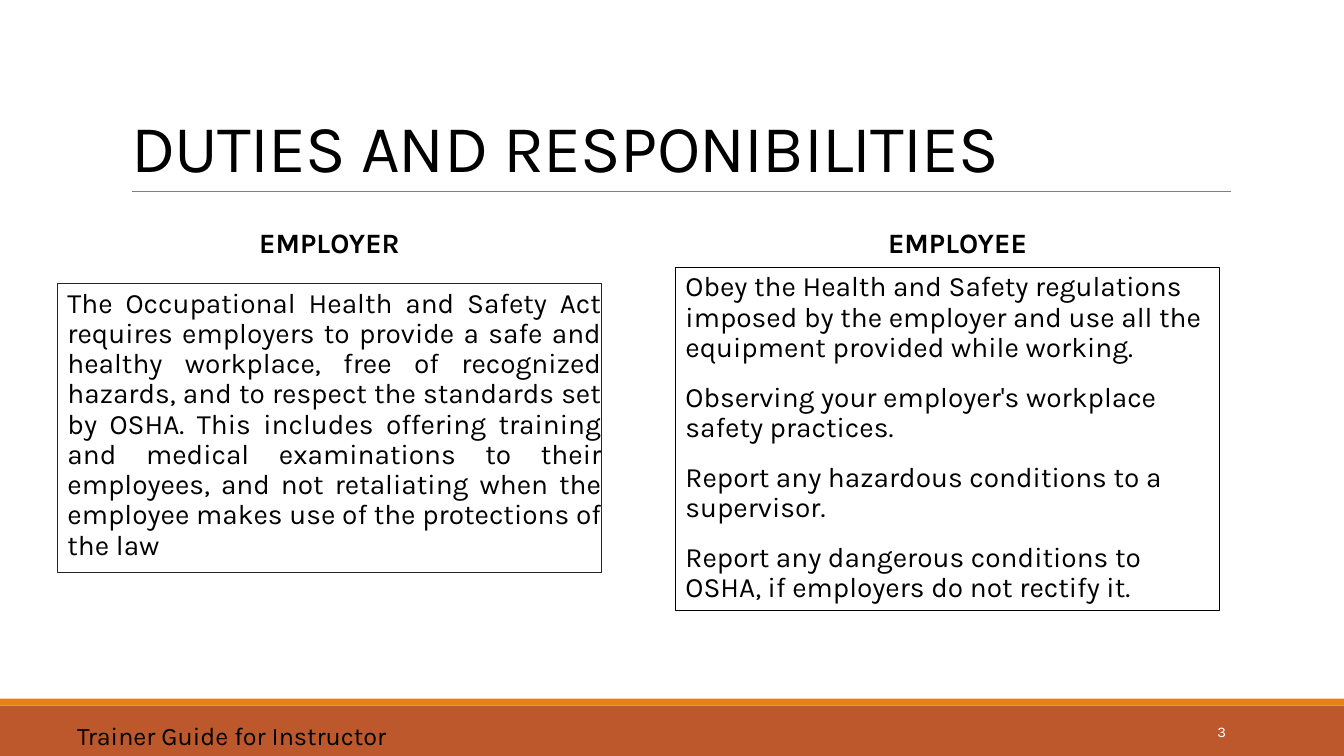
from lxml.etree import SubElement
from pptx import Presentation
from pptx.dml.color import RGBColor
from pptx.enum.shapes import MSO_CONNECTOR, MSO_SHAPE
from pptx.enum.text import MSO_ANCHOR, MSO_AUTO_SIZE, PP_ALIGN
from pptx.oxml.ns import qn
from pptx.util import Pt

BLACK = RGBColor(0x00, 0x00, 0x00)
WHITE = RGBColor(0xFF, 0xFF, 0xFF)
CHARCOAL = RGBColor(0x26, 0x26, 0x26)
GRAY = RGBColor(0x80, 0x80, 0x80)
RUST = RGBColor(0xBD, 0x58, 0x2C)
ORANGE = RGBColor(0xE4, 0x83, 0x12)
FONT = "Karla"
COLUMN_WIDTH = 388.8

EMPLOYER_DUTIES = [
    "The Occupational Health and Safety Act requires employers to provide a safe "
    "and healthy workplace, free of recognized hazards, and to respect the "
    "standards set by OSHA. This includes offering training and medical "
    "examinations to their employees, and not retaliating when the employee "
    "makes use of the protections of the law",
]
EMPLOYEE_DUTIES = [
    "Obey the Health and Safety regulations imposed by the employer and use all "
    "the equipment provided while working.",
    "Observing your employer's workplace safety practices.",
    "Report any hazardous conditions to a supervisor.",
    "Report any dangerous conditions to OSHA, if employers do not rectify it.",
]


def place(shape, left, top, width, height):
    shape.left, shape.top = Pt(left), Pt(top)
    shape.width, shape.height = Pt(width), Pt(height)


def add_blank_bullet(paragraph):
    """Hang the paragraph on an invisible bullet."""
    properties = paragraph._p.get_or_add_pPr()
    properties.set("marL", str(Pt(7.2)))
    properties.set("indent", str(Pt(-7.2)))
    bullet_color = SubElement(properties, qn("a:buClr"))
    SubElement(bullet_color, qn("a:srgbClr"), val=str(ORANGE))
    SubElement(properties, qn("a:buChar"), char=" ")


def write(shape, paragraphs, size=20, color=BLACK, bold=False,
          align=PP_ALIGN.LEFT, anchor=MSO_ANCHOR.TOP, line_spacing=1.0,
          side_inset=7.2, bulleted=False, tracking=None):
    frame = shape.text_frame
    frame.word_wrap = True
    frame.auto_size = MSO_AUTO_SIZE.NONE
    frame.vertical_anchor = anchor
    frame.margin_left = frame.margin_right = Pt(side_inset)
    frame.margin_top = frame.margin_bottom = Pt(3.6)
    for index, text in enumerate(paragraphs):
        paragraph = frame.add_paragraph() if index else frame.paragraphs[0]
        if bulleted:
            add_blank_bullet(paragraph)
        paragraph.alignment = align
        paragraph.line_spacing = line_spacing
        paragraph.space_before = Pt(12 if index else 0)
        paragraph.space_after = Pt(2 if bulleted else 0)
        run = paragraph.add_run()
        run.text = text
        run.font.name = FONT
        run.font.size = Pt(size)
        run.font.bold = bold
        run.font.color.rgb = color
        if tracking is not None:
            run.font._element.set("spc", str(int(tracking * 100)))


def add_bar(slide, top, height, color):
    bar = slide.shapes.add_shape(
        MSO_SHAPE.RECTANGLE, 0, Pt(top), Pt(960), Pt(height))
    bar.shadow.inherit = False
    bar.fill.solid()
    bar.fill.fore_color.rgb = color
    bar.line.fill.background()


def add_title_rule(slide):
    rule = slide.shapes.add_connector(
        MSO_CONNECTOR.STRAIGHT, Pt(94.3), Pt(136.8), Pt(879), Pt(136.8))
    rule.line.color.rgb = GRAY
    rule.line.width = Pt(0.5)
    SubElement(rule._element.spPr, qn("a:effectLst"))


def fill_heading(heading, text, left):
    place(heading, left, 145.4, COLUMN_WIDTH, 58.3)
    write(heading, [text], bold=True, align=PP_ALIGN.CENTER,
          anchor=MSO_ANCHOR.MIDDLE, line_spacing=0.9)


def fill_duties(duties, paragraphs, left, top, height, outline, align):
    place(duties, left, top, COLUMN_WIDTH, height)
    duties.line.color.rgb = outline
    duties.line.width = Pt(0.75)
    write(duties, paragraphs, align=align, line_spacing=0.9,
          side_inset=0, bulleted=True)


def add_label(slide, text, left, top, width, height, **text_format):
    label = slide.shapes.add_textbox(Pt(left), Pt(top), Pt(width), Pt(height))
    write(label, [text], **text_format)


def main():
    presentation = Presentation()
    presentation.slide_width, presentation.slide_height = Pt(960), Pt(540)
    comparison_layout = presentation.slide_layouts[4]
    slide = presentation.slides.add_slide(comparison_layout)
    title, employer, employer_duties, employee, employee_duties = slide.placeholders

    add_bar(slide, 504, 36, RUST)
    add_bar(slide, 499, 5, ORANGE)
    add_title_rule(slide)

    place(title, 86.4, 22.3, 792, 114.5)
    write(title, ["DUTIES AND RESPONIBILITIES"], size=48,
          anchor=MSO_ANCHOR.BOTTOM, line_spacing=0.85, tracking=-0.5)

    fill_heading(employer, "EMPLOYER", 41)
    fill_duties(employer_duties, EMPLOYER_DUTIES, 41, 202.8, 206,
                CHARCOAL, PP_ALIGN.JUSTIFY)
    fill_heading(employee, "EMPLOYEE", 489.6)
    fill_duties(employee_duties, EMPLOYEE_DUTIES, 482.4, 191.2, 244.8,
                BLACK, PP_ALIGN.LEFT)

    add_label(slide, "Trainer Guide for Instructor", -10.8, 511.2, 352.8, 28.8,
              size=18, align=PP_ALIGN.CENTER)
    add_label(slide, "3", 779.8, 508.3, 103, 28.8, size=10.5, color=WHITE,
              align=PP_ALIGN.RIGHT, anchor=MSO_ANCHOR.MIDDLE)
    presentation.save("out.pptx")


if __name__ == "__main__":
    main()
